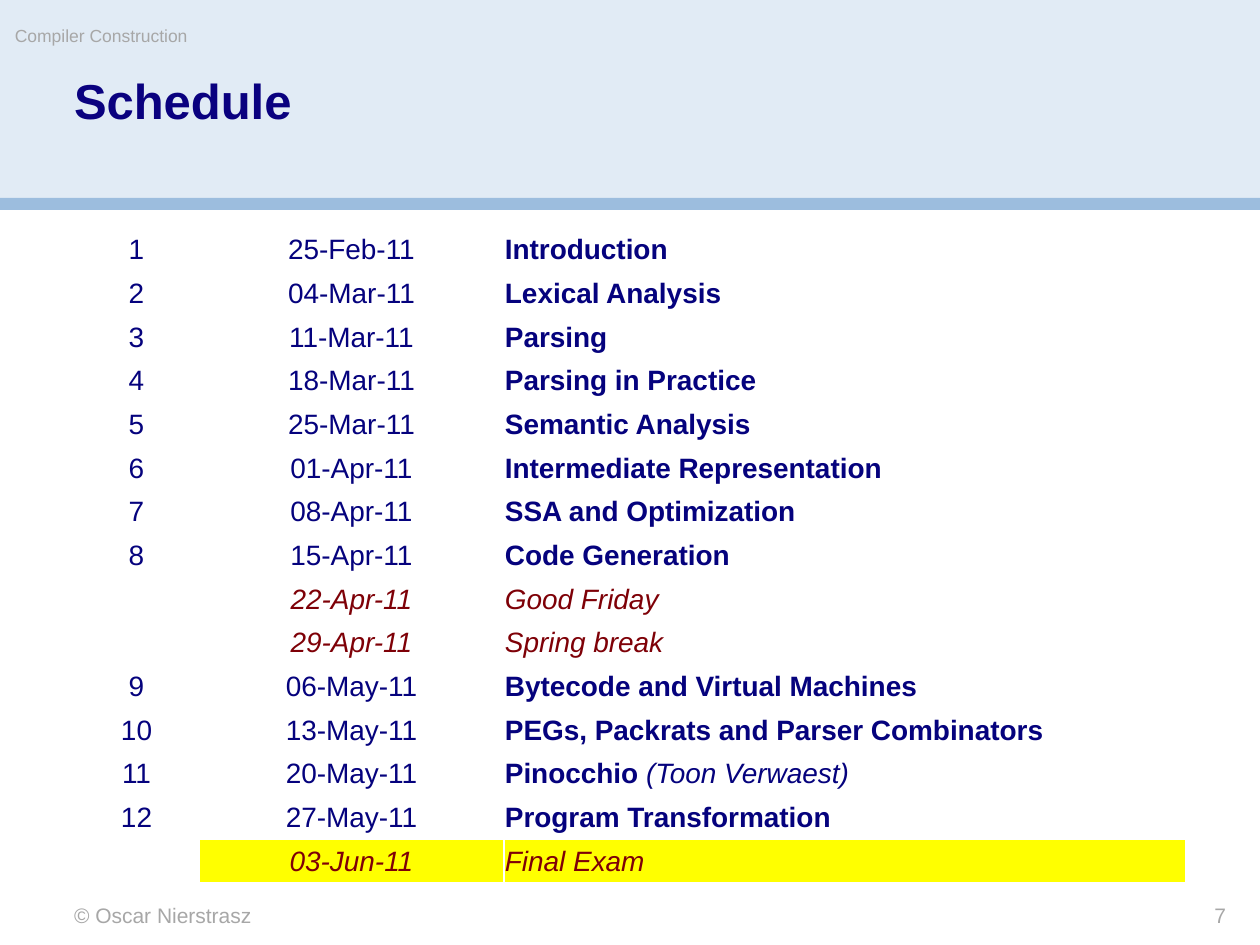
from lxml import etree
from pptx import Presentation, util as u
from pptx.dml.color import RGBColor
from pptx.enum import shapes, text
from pptx.oxml import ns

SCALE = 914400 / 126
FONT = "Arial"
PALE = RGBColor(0xE1, 0xEB, 0xF5)
BLUE = RGBColor(0x9C, 0xBD, 0xDE)
NAVY = RGBColor(0x0A, 0x01, 0x7F)
INK = RGBColor(0x05, 0x02, 0x7D)
RED = RGBColor(0x7E, 0x00, 0x07)
GREY = RGBColor(0xA7, 0xA7, 0xA7)
YELLOW = RGBColor(0xFF, 0xFF, 0x00)
LEFT, CENTER, RIGHT = text.PP_ALIGN.LEFT, text.PP_ALIGN.CENTER, text.PP_ALIGN.RIGHT

COLS = (125, 305, 682)
ROWS = [
    ("1", "25-Feb-11", "Introduction"),
    ("2", "04-Mar-11", "Lexical Analysis"),
    ("3", "11-Mar-11", "Parsing"),
    ("4", "18-Mar-11", "Parsing in Practice"),
    ("5", "25-Mar-11", "Semantic Analysis"),
    ("6", "01-Apr-11", "Intermediate Representation"),
    ("7", "08-Apr-11", "SSA and Optimization"),
    ("8", "15-Apr-11", "Code Generation"),
    ("", "22-Apr-11", "Good Friday"),
    ("", "29-Apr-11", "Spring break"),
    ("9", "06-May-11", "Bytecode and Virtual Machines"),
    ("10", "13-May-11", "PEGs, Packrats and Parser Combinators"),
    ("11", "20-May-11", "Pinocchio |(Toon Verwaest)"),
    ("12", "27-May-11", "Program Transformation"),
    ("", "03-Jun-11", "Final Exam"),
]


def px(*vals):
    """Turn px lengths into EMU."""
    return [u.Emu(round(v * SCALE)) for v in vals]


def style(para, size, color, bold=False, italic=False, align=LEFT):
    """Set the font and alignment of a paragraph."""
    font = para.font
    font.name, font.size = FONT, u.Pt(size)
    font.bold, font.italic = bold, italic
    font.color.rgb = color
    para.alignment = align


def trim(frame):
    """Remove the insets of a text frame."""
    frame.margin_left = frame.margin_top = 0
    frame.margin_right = frame.margin_bottom = 0


def band(slide, box, color):
    """Draw a plain filled strip."""
    strip = slide.shapes.add_shape(shapes.MSO_SHAPE.RECTANGLE, *px(*box))
    strip.shadow.inherit = False
    strip.fill.solid()
    strip.fill.fore_color.rgb = color
    strip.line.fill.background()


def label(slide, box, words, size, align=LEFT, wrap=True):
    """Place a small grey line of text."""
    frame = slide.shapes.add_textbox(*px(*box)).text_frame
    trim(frame)
    frame.word_wrap = wrap
    para = frame.paragraphs[0]
    para.text = words
    style(para, size, GREY, align=align)


def header(slide, box):
    """Build the banner with its rule, running head and title."""
    x, y, w, h = box
    band(slide, (x, y, w, h - 11), PALE)
    band(slide, (x, y + h - 12, w, 12), BLUE)
    label(slide, (x + 15, y + 25, 743, 35), "Compiler Construction", 10, wrap=False)
    title = slide.shapes.title
    title.left, title.top, title.width, title.height = px(x + 74, y + 77, 1112, 112)
    frame = title.text_frame
    trim(frame)
    frame.word_wrap = True
    frame.vertical_anchor = text.MSO_ANCHOR.TOP
    para = frame.paragraphs[0]
    para.text = "Schedule"
    para.line_spacing = 0.9
    style(para, 28, NAVY, bold=True)
    slide.shapes._spTree.append(title._element)


def edge(cell):
    """Give a cell thin white borders."""
    props = cell._tc.get_or_add_tcPr()
    for i, side in enumerate(("lnL", "lnR", "lnT", "lnB")):
        line = etree.Element(ns.qn("a:" + side), w=str(u.Pt(1)))
        fill = etree.SubElement(line, ns.qn("a:solidFill"))
        etree.SubElement(fill, ns.qn("a:srgbClr"), val="FFFFFF")
        props.insert(i, line)


def fill_cell(cell, words, col, free, last):
    """Write and format one schedule cell."""
    cell.margin_left, cell.margin_top, cell.margin_right, cell.margin_bottom = px(1, 1, 1, 0)
    cell.vertical_anchor = text.MSO_ANCHOR.MIDDLE
    if last and col:
        cell.fill.solid()
        cell.fill.fore_color.rgb = YELLOW
    else:
        cell.fill.background()
    edge(cell)
    topic = col == 2
    para = cell.text_frame.paragraphs[0]
    style(para, 16, RED if free else INK, bold=topic and not free,
          italic=free, align=LEFT if topic else CENTER)
    main, _, guest = words.partition("|")
    if main:
        para.add_run().text = main
    if guest:
        run = para.add_run()
        run.text = guest
        run.font.bold, run.font.italic = False, True


def schedule(slide, box):
    """Build the table of lectures, with free days and the exam in red."""
    table = slide.shapes.add_table(len(ROWS), len(COLS), *px(*box)).table
    table.first_row = table.horz_banding = False
    for col, width in zip(table.columns, px(*COLS)):
        col.width = width
    for r, row in enumerate(ROWS):
        for c, words in enumerate(row):
            fill_cell(table.cell(r, c), words, c, not row[0], r == len(ROWS) - 1)


def footer(slide, box):
    """Place the credit and the page number."""
    x, y, w, h = box
    label(slide, (x, y, 525, h), "© Oscar Nierstrasz", 12)
    label(slide, (x + w - 186, y, 186, h), "7", 12, align=RIGHT)


def main():
    """Build and save the slide."""
    prs = Presentation()
    prs.slide_width, prs.slide_height = px(1260, 945)
    slide = prs.slides.add_slide(prs.slide_layouts[5])
    header(slide, (0, 0, 1260, 210))
    schedule(slide, (74, 228, 1112, 655))
    footer(slide, (74, 903, 1152, 25))
    prs.save("out.pptx")


if __name__ == "__main__":
    main()
